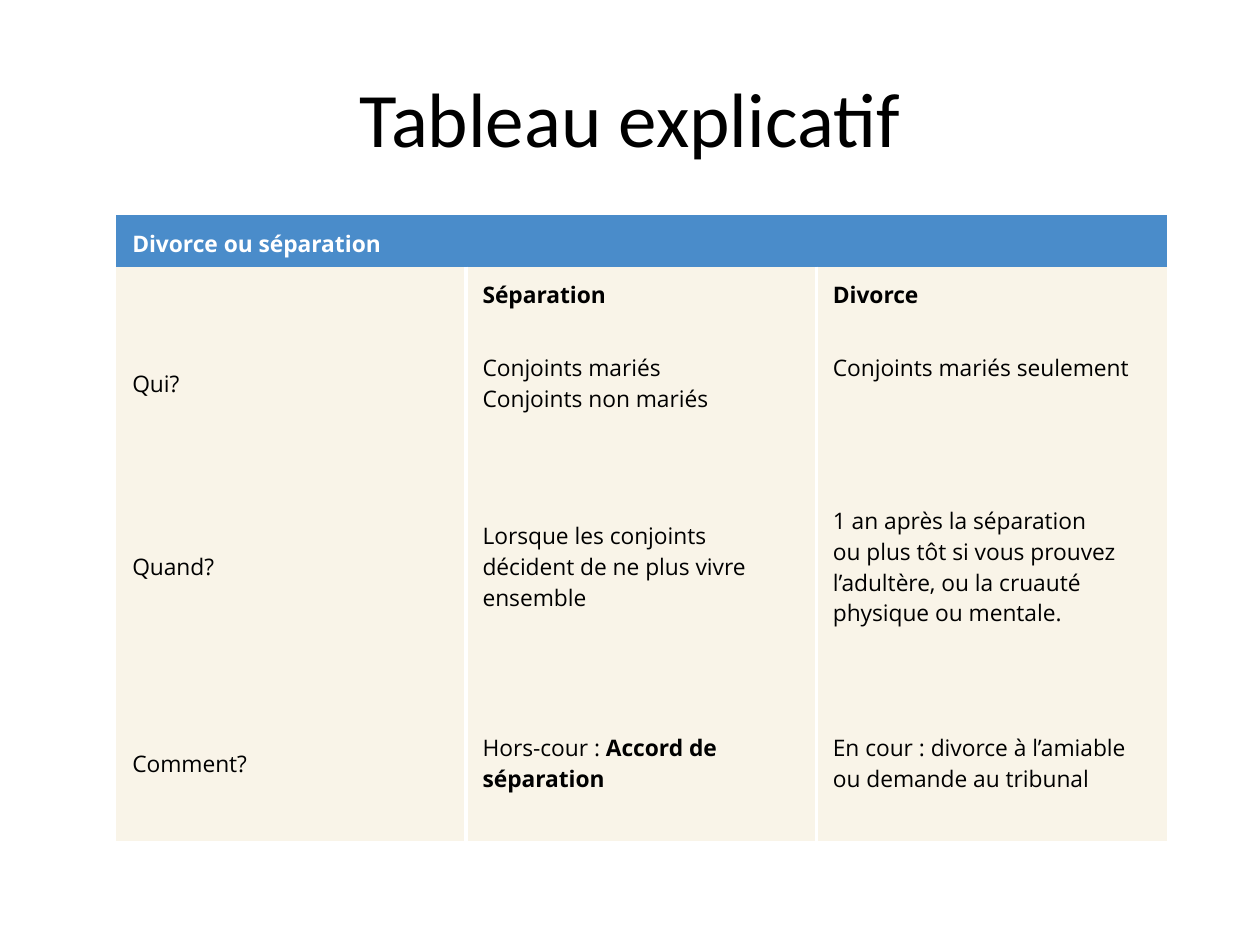
"""Build a slide with a table that compares separation and divorce."""
from dataclasses import dataclass

from lxml import etree
from pptx import Presentation
from pptx import util as u
from pptx.dml.color import RGBColor
from pptx.enum import text
from pptx.oxml import ns

WHITE = RGBColor(0xFF, 0xFF, 0xFF)
BLACK = RGBColor(0, 0, 0)
BLUE = RGBColor(0x4A, 0x8C, 0xCA)
CREAM = RGBColor(0xF9, 0xF4, 0xE8)
PLAIN = "{2D5ABB26-0587-4C30-8999-92F81FD0307C}"


@dataclass(frozen=True)
class Run:
    words: str
    bold: bool = False


@dataclass(frozen=True)
class Entry:
    lines: tuple[tuple[Run, ...], ...] = ()
    foot: float = 0.09


def plain(*lines: str, foot: float = 0.09) -> Entry:
    return Entry(tuple((Run(line),) for line in lines), foot)


def strong(words: str) -> Entry:
    return Entry(((Run(words, True),),))


WIDTH = 2.78
HEIGHTS = (0.4, 0.4, 1.03, 1.88, 1.24)
ROWS = (
    (Entry(), strong("Séparation"), strong("Divorce")),
    (
        plain("Qui?"),
        plain("Conjoints mariés", "Conjoints non mariés"),
        plain("Conjoints mariés seulement", foot=0.34),
    ),
    (
        plain("Quand?"),
        plain("Lorsque les conjoints décident de ne plus vivre ensemble"),
        plain(
            "1 an après la séparation",
            "ou plus tôt si vous prouvez l’adultère, ou la cruauté physique ou mentale.",
        ),
    ),
    (
        plain("Comment?"),
        Entry(((Run("Hors-cour : "), Run("Accord de séparation", True)),)),
        plain("En cour : divorce à l’amiable ou demande au tribunal"),
    ),
)


def add_run(para, run: Run, face: str, size: float, ink: RGBColor) -> None:
    part = para.add_run()
    part.text = run.words
    font = part.font
    font.name, font.size, font.bold = face, u.Pt(size), run.bold
    font.color.rgb = ink


def add_edge(cell, side: str) -> None:
    edge = etree.SubElement(
        cell._tc.get_or_add_tcPr(), ns.qn(f"a:ln{side}"), w=str(u.Pt(2.25))
    )
    fill = etree.SubElement(edge, ns.qn("a:solidFill"))
    etree.SubElement(fill, ns.qn("a:srgbClr"), val=str(WHITE))


def fill_cell(cell, entry: Entry, back: RGBColor, ink: RGBColor) -> None:
    cell.fill.solid()
    cell.fill.fore_color.rgb = back
    if not entry.lines:
        return
    cell.vertical_anchor = text.MSO_ANCHOR.MIDDLE
    cell.margin_left = cell.margin_right = u.Inches(0.13)
    cell.margin_top, cell.margin_bottom = u.Inches(0.1), u.Inches(entry.foot)
    frame = cell.text_frame
    for i, line in enumerate(entry.lines):
        para = frame.add_paragraph() if i else frame.paragraphs[0]
        for run in line:
            add_run(para, run, "Open Sans", 13, ink)


def add_title(slide) -> None:
    box = slide.shapes.add_textbox(
        u.Inches(0.5), u.Inches(0.3), u.Inches(9), u.Inches(1.25)
    )
    frame = box.text_frame
    frame.word_wrap = True
    frame.vertical_anchor = text.MSO_ANCHOR.MIDDLE
    para = frame.paragraphs[0]
    para.alignment = text.PP_ALIGN.CENTER
    add_run(para, Run("Tableau explicatif"), "Calibri", 44, BLACK)


def add_grid(slide) -> None:
    count = len(ROWS[0])
    frame = slide.shapes.add_table(
        len(HEIGHTS), count, u.Inches(0.92), u.Inches(1.71),
        u.Inches(WIDTH * count), u.Inches(sum(HEIGHTS)),
    )
    table = frame.table
    table._tbl.tblPr.find(ns.qn("a:tableStyleId")).text = PLAIN
    table.horz_banding = False
    for col in table.columns:
        col.width = u.Inches(WIDTH)
    for row, height in zip(table.rows, HEIGHTS):
        row.height = u.Inches(height)
    head = table.cell(0, 0)
    head.merge(table.cell(0, count - 1))
    fill_cell(head, strong("Divorce ou séparation"), BLUE, WHITE)
    for r, row in enumerate(ROWS, 1):
        for c, entry in enumerate(row):
            cell = table.cell(r, c)
            if c > 0:
                add_edge(cell, "L")
            if c < count - 1:
                add_edge(cell, "R")
            fill_cell(cell, entry, CREAM, BLACK)


def main() -> None:
    deck = Presentation()
    deck.slide_width, deck.slide_height = u.Inches(10), u.Inches(7.5)
    slide = deck.slides.add_slide(deck.slide_layouts[6])
    add_title(slide)
    add_grid(slide)
    deck.save("out.pptx")


if __name__ == "__main__":
    main()
